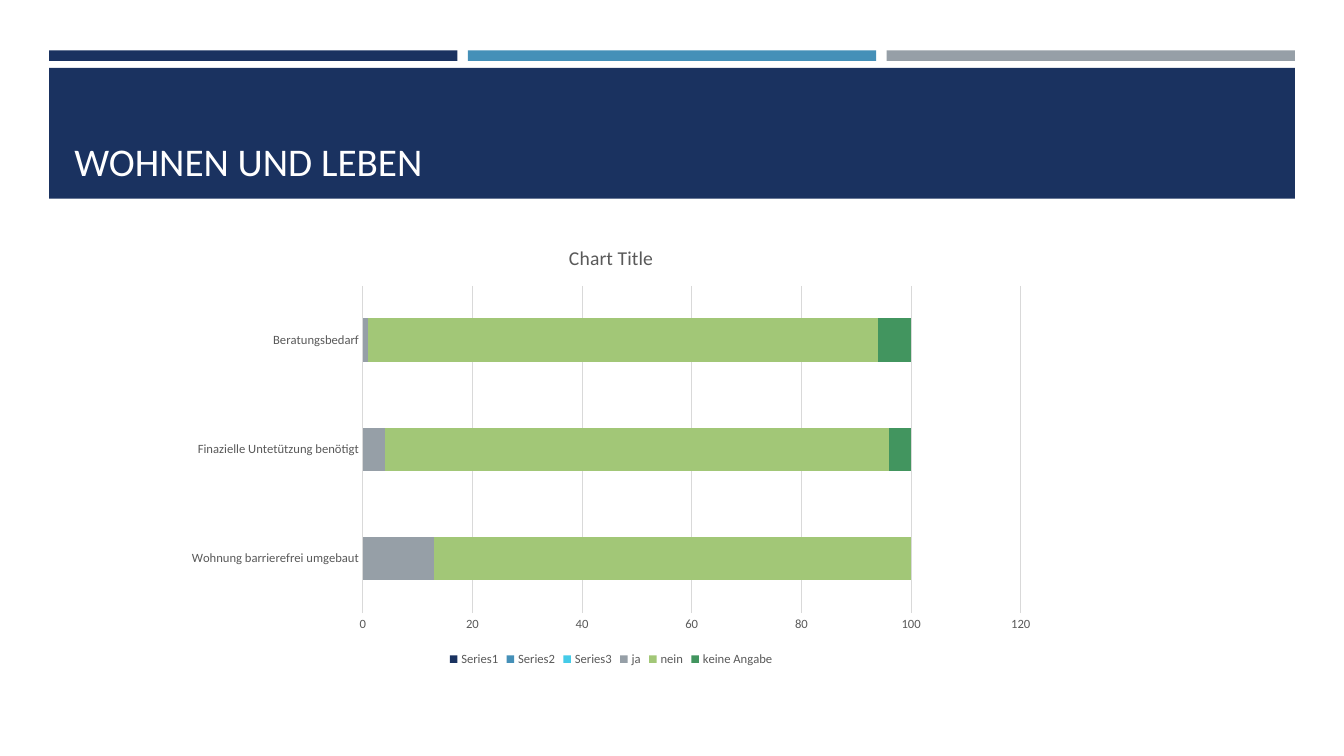
import pptx
import pptx.chart.data
import pptx.dml.color
import pptx.enum.chart
import pptx.enum.shapes
import pptx.enum.text
import pptx.util
from dataclasses import dataclass

Pt = pptx.util.Pt


@dataclass(frozen=True)
class Theme:
    font: str = "Calibri"
    navy: str = "1A3260"
    blue: str = "4590B8"
    cyan: str = "45CBE8"
    grey: str = "969FA7"
    lime: str = "A2C777"
    green: str = "42955F"
    white: str = "FFFFFF"
    text: str = "595959"
    rule: str = "D9D9D9"
    title_size: float = 28
    chart_title_size: float = 14
    label_size: float = 9


def rgb(value):
    return pptx.dml.color.RGBColor.from_string(value)


class SlideBuilder:
    def __init__(self, prs, theme):
        self.theme = theme
        self.s = prs.slides.add_slide(prs.slide_layouts[5])

    def style(self, font, size, color):
        font.name = self.theme.font
        font.size = Pt(size)
        font.bold = False
        font.color.rgb = rgb(color)

    def box(self, left, top, width, height, color):
        sp = self.s.shapes.add_shape(
            pptx.enum.shapes.MSO_SHAPE.RECTANGLE,
            Pt(left), Pt(top), Pt(width), Pt(height))
        sp.shadow.inherit = False
        sp.fill.solid()
        sp.fill.fore_color.rgb = rgb(color)
        sp.line.fill.background()

    def title(self, text, left, top, width, height):
        """Fill the title placeholder and bring it to the front."""
        sp = self.s.shapes.title
        sp.left, sp.top, sp.width, sp.height = map(Pt, (left, top, width, height))
        tf = sp.text_frame
        tf.word_wrap = True
        tf.auto_size = pptx.enum.text.MSO_AUTO_SIZE.NONE
        tf.vertical_anchor = pptx.enum.text.MSO_ANCHOR.BOTTOM
        p = tf.paragraphs[0]
        p.alignment = pptx.enum.text.PP_ALIGN.LEFT
        r = p.add_run()
        r.text = text
        self.style(r.font, self.theme.title_size, self.theme.white)
        sp.element.getparent().append(sp.element)

    def stacked_bars(self, title, categories, series, left, top, width, height):
        """Add a stacked bar chart; series holds (name, values, colour)."""
        t = self.theme
        data = pptx.chart.data.CategoryChartData()
        data.categories = categories
        for name, values, _ in series:
            data.add_series(name, values)
        chart = self.s.shapes.add_chart(
            pptx.enum.chart.XL_CHART_TYPE.BAR_STACKED,
            Pt(left), Pt(top), Pt(width), Pt(height), data).chart
        self.style(chart.font, t.label_size, t.text)

        chart.has_title = True
        r = chart.chart_title.text_frame.paragraphs[0].add_run()
        r.text = title
        self.style(r.font, t.chart_title_size, t.text)
        chart.chart_title.include_in_layout = False

        chart.has_legend = True
        chart.legend.position = pptx.enum.chart.XL_LEGEND_POSITION.BOTTOM
        chart.legend.include_in_layout = False
        self.style(chart.legend.font, t.label_size, t.text)

        plot = chart.plots[0]
        plot.gap_width = 150
        plot.overlap = 100
        plot.vary_by_categories = False
        for ser, (_, _, color) in zip(plot.series, series):
            ser.format.fill.solid()
            ser.format.fill.fore_color.rgb = rgb(color)
            ser.invert_if_negative = False

        for axis in (chart.category_axis, chart.value_axis):
            axis.major_tick_mark = pptx.enum.chart.XL_TICK_MARK.NONE
            axis.minor_tick_mark = pptx.enum.chart.XL_TICK_MARK.NONE
            self.style(axis.tick_labels.font, t.label_size, t.text)
        chart.category_axis.has_major_gridlines = False
        chart.value_axis.format.line.fill.background()
        chart.value_axis.minimum_scale = 0
        chart.value_axis.maximum_scale = 120
        chart.value_axis.major_unit = 20
        chart.value_axis.has_major_gridlines = True
        for line in (chart.category_axis.format.line,
                     chart.value_axis.major_gridlines.format.line):
            line.color.rgb = rgb(t.rule)
            line.width = Pt(0.75)


def main():
    prs = pptx.Presentation()
    prs.slide_width, prs.slide_height = Pt(960), Pt(540)
    t = Theme()
    slide = SlideBuilder(prs, t)

    margin, band_width, gap = 35, 890, 7.5
    strip_width = (band_width - 2 * gap) / 3
    for i, color in enumerate((t.navy, t.blue, t.grey)):
        slide.box(margin + i * (strip_width + gap), 36, strip_width, 7.5, color)
    slide.box(margin, 48.5, band_width, 93.5, t.navy)
    slide.title("WOHNEN UND LEBEN", 46, 55.5, 868, 80)

    empty = (None, None, None)
    slide.stacked_bars(
        "Chart Title",
        ("Wohnung barrierefrei umgebaut", "Finazielle Untetützung benötigt",
         "Beratungsbedarf"),
        (("Series1", empty, t.navy),
         ("Series2", empty, t.blue),
         ("Series3", empty, t.cyan),
         ("ja", (13, 4, 1), t.grey),
         ("nein", (87, 92, 93), t.lime),
         ("keine Angabe", (0, 4, 6), t.green)),
        124.5, 162, 624, 317)
    prs.save("out.pptx")


if __name__ == "__main__":
    main()
